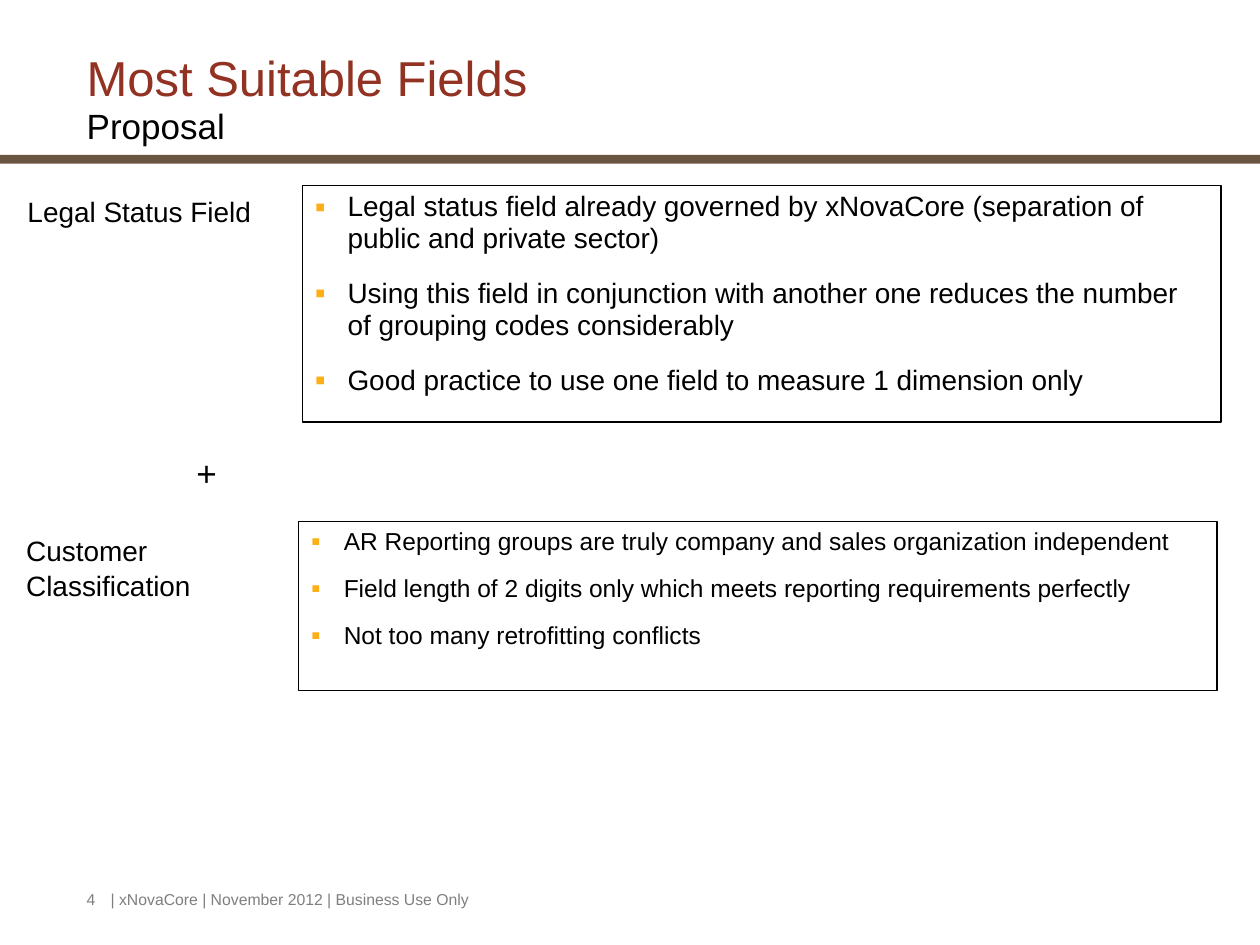
from lxml.etree import SubElement
from pptx import Presentation
from pptx.dml.color import RGBColor
from pptx.enum.shapes import MSO_SHAPE
from pptx.enum.text import MSO_ANCHOR as ANCHOR
from pptx.oxml.ns import qn
from pptx.util import Inches, Pt

WIDTH, HEIGHT = Inches(10), Inches(7.5)
COL, ROW = WIDTH / 100, HEIGHT / 75

BLACK = RGBColor(0x00, 0x00, 0x00)
RUST = RGBColor(0x92, 0x32, 0x22)
BROWN = RGBColor(0x6A, 0x55, 0x40)
GRAY = RGBColor(0x7F, 0x7F, 0x7F)
AMBER = RGBColor(0xFC, 0xAF, 0x17)

LEGAL_POINTS = [
    "Legal status field already governed by xNovaCore (separation of public and private sector)",
    "Using this field in conjunction with another one reduces the number of grouping codes considerably",
    "Good practice to use one field to measure 1 dimension only",
]
CUSTOMER_POINTS = [
    "AR Reporting groups are truly company and sales organization independent",
    "Field length of 2 digits only which meets reporting requirements perfectly",
    "Not too many retrofitting conflicts",
]


def place(col, row, cols, rows):
    return round(col * COL), round(row * ROW), round(cols * COL), round(rows * ROW)


def add_run(p, text, size=16, color=BLACK):
    r = p.add_run()
    r.text = text
    r.font.name = "Arial"
    r.font.size = Pt(size)
    r.font.color.rgb = color


def add_bullet(p):
    pPr = p._p.get_or_add_pPr()
    pPr.set("marL", str(Inches(0.26)))
    pPr.set("indent", str(-Inches(0.26)))
    color = SubElement(pPr, qn("a:buClr"))
    SubElement(color, qn("a:srgbClr"), val=str(AMBER))
    SubElement(pPr, qn("a:buSzPct"), val="110000")
    SubElement(pPr, qn("a:buFont"), typeface="Arial")
    SubElement(pPr, qn("a:buChar"), char="▪")


def add_text(slide, area, text, anchor=ANCHOR.TOP, spacing=1.05, **style):
    tf = slide.shapes.add_textbox(*place(*area)).text_frame
    tf.word_wrap = True
    tf.vertical_anchor = anchor
    p = tf.paragraphs[0]
    p.line_spacing = spacing
    add_run(p, text, **style)
    return p


def add_rect(slide, area, fill=None, line=None):
    sp = slide.shapes.add_shape(MSO_SHAPE.RECTANGLE, *place(*area))
    sp.shadow.inherit = False
    if fill is None:
        sp.fill.background()
    else:
        sp.fill.solid()
        sp.fill.fore_color.rgb = fill
    if line is None:
        sp.line.fill.background()
    else:
        sp.line.color.rgb = line
        sp.line.width = Pt(0.75)
    return sp


def add_bullet_box(slide, area, points, size):
    tf = add_rect(slide, area, line=BLACK).text_frame
    tf.word_wrap = True
    tf.vertical_anchor = ANCHOR.TOP
    for i, point in enumerate(points):
        p = tf.paragraphs[0] if i == 0 else tf.add_paragraph()
        p.alignment = 1
        p.line_spacing = 0.95
        if i:
            p.space_before = Pt(round(0.8 * size))
        add_bullet(p)
        add_run(p, point, size=size)


def add_title(slide, title, subtitle):
    p = add_text(slide, (5.9, 3.5, 91, 8.7), title, anchor=ANCHOR.BOTTOM,
                 spacing=0.95, size=28, color=RUST)
    p.add_line_break()
    add_run(p, subtitle, size=20)


def add_footer(slide, number, text):
    style = dict(anchor=ANCHOR.MIDDLE, spacing=1, size=9, color=GRAY)
    add_text(slide, (5.9, 70, 4.4, 2.7), number, **style)
    add_text(slide, (7.8, 70, 70.8, 2.7), text, **style)


def main():
    prs = Presentation()
    prs.slide_width, prs.slide_height = WIDTH, HEIGHT
    slide = prs.slides.add_slide(prs.slide_layouts[6])

    add_rect(slide, (0, 12.3, 100, 0.7), fill=BROWN)
    add_title(slide, "Most Suitable Fields", "Proposal")
    add_text(slide, (1.2, 14.8, 22.6, 3.7), "Legal Status Field")
    add_bullet_box(slide, (24, 14.7, 72.9, 18.8), LEGAL_POINTS, size=16)
    add_text(slide, (14.6, 35.2, 5.5, 4.4), "+", size=20)
    add_text(slide, (1.1, 41.7, 22.6, 6.4), "Customer Classification")
    add_bullet_box(slide, (23.7, 41.4, 72.9, 13.4), CUSTOMER_POINTS, size=14)
    add_footer(slide, "4", "| xNovaCore | November 2012 | Business Use Only")

    prs.save("out.pptx")


if __name__ == "__main__":
    main()
